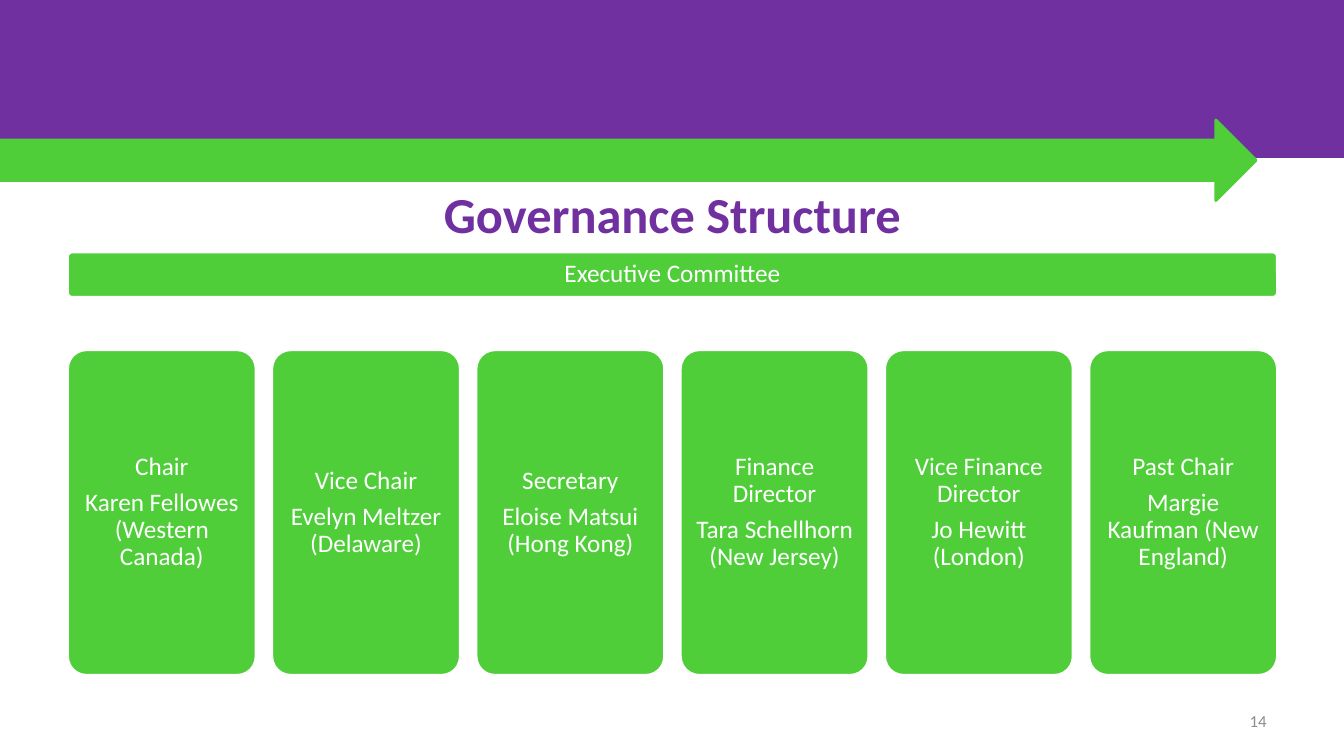
from pptx import Presentation
from pptx.dml.color import RGBColor
from pptx.enum.shapes import MSO_SHAPE as Preset
from pptx.enum.text import MSO_ANCHOR as Anchor, PP_ALIGN as Align
from pptx.util import Inches, Pt

PURPLE = RGBColor(0x70, 0x30, 0xA0)
GREEN = RGBColor(0x4F, 0xCE, 0x3A)
WHITE = RGBColor(0xFF, 0xFF, 0xFF)
GRAY = RGBColor(0x8C, 0x8C, 0x8C)

presentation = Presentation()
presentation.slide_width = Inches(13.33)
presentation.slide_height = Inches(7.5)
slide = presentation.slides.add_slide(presentation.slide_layouts[6])


def add_block(preset, left, top, width, height, fill, line):
    shape = slide.shapes.add_shape(
        preset, Inches(left), Inches(top), Inches(width), Inches(height))
    shape.shadow.inherit = False
    shape.fill.solid()
    shape.fill.fore_color.rgb = fill
    shape.line.color.rgb = line
    shape.line.width = Pt(2)
    return shape


def write_text(shape, text, size, color, align=Align.CENTER, bold=False):
    frame = shape.text_frame
    frame.word_wrap = True
    frame.vertical_anchor = Anchor.MIDDLE
    frame.text = text
    for paragraph in frame.paragraphs:
        paragraph.alignment = align
        for run in paragraph.runs:
            run.font.name = "Calibri"
            run.font.size = Pt(size)
            run.font.bold = bold
            run.font.color.rgb = color


# Header band and arrow
add_block(Preset.RECTANGLE, 0, 0.01, 13.33, 1.54, PURPLE, PURPLE)
add_block(Preset.RIGHT_ARROW, 0, 1.19, 12.46, 0.8, GREEN, GREEN)

# Title
title = slide.shapes.add_textbox(Inches(0.67), Inches(1.83), Inches(12), Inches(0.58))
write_text(title, "Governance Structure", 36, PURPLE, bold=True)

# Committee bar and one card per officer
officers = [
    ("Chair", "Karen Fellowes (Western Canada)"),
    ("Vice Chair", "Evelyn Meltzer (Delaware)"),
    ("Secretary", "Eloise Matsui (Hong Kong)"),
    ("Finance Director", "Tara Schellhorn (New Jersey)"),
    ("Vice Finance Director", "Jo Hewitt (London)"),
    ("Past Chair", "Margie Kaufman (New England)"),
]
left_edge, total_width, card_width = 0.67, 12, 1.87
card_step = (total_width - card_width) / (len(officers) - 1)

cards = [("Executive Committee", left_edge, 2.5, total_width, 0.45)]
for index, (role, person) in enumerate(officers):
    cards.append((f"{role}\n{person}", left_edge + index * card_step, 3.47, card_width, 3.23))

for text, left, top, width, height in cards:
    card = add_block(Preset.ROUNDED_RECTANGLE, left, top, width, height, GREEN, WHITE)
    card.adjustments[0] = 0.1
    write_text(card, text, 18, WHITE)
    frame = card.text_frame
    frame.margin_left = frame.margin_right = Inches(0.07)
    frame.margin_top = frame.margin_bottom = Inches(0.07)
    for paragraph in frame.paragraphs:
        paragraph.line_spacing = 0.9
        paragraph.space_after = Pt(6.3)

# Slide number
number = slide.shapes.add_textbox(Inches(9.55), Inches(6.95), Inches(3.11), Inches(0.4))
write_text(number, "14", 12, GRAY, align=Align.RIGHT)

presentation.save("out.pptx")
